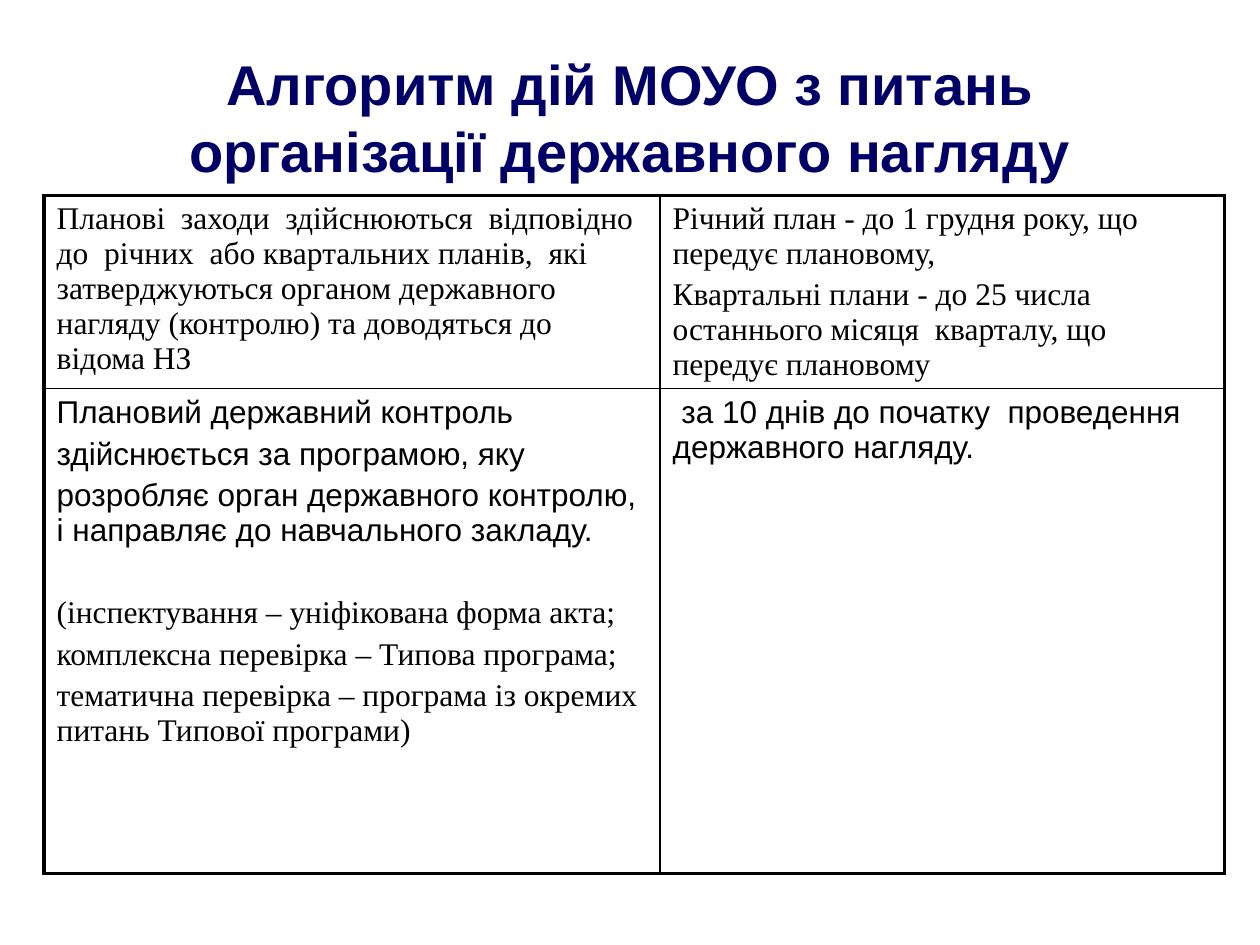
from dataclasses import dataclass

import pptx
import pptx.dml.color
import pptx.enum.text
import pptx.oxml
import pptx.oxml.ns
import pptx.util
from pptx.util import Pt


@dataclass(frozen=True)
class Theme:
    sans: str = "Arial"
    serif: str = "Times New Roman"
    title_color: str = "000066"
    ink: str = "000000"
    title_size: float = 32
    body_size: float = 18
    outer_line: float = 2.25
    inner_line: float = 1
    gap: float = 3.6
    section_gap: float = 27


@dataclass(frozen=True)
class Para:
    text: str
    font: str
    before: float


THEME = Theme()
COLUMNS = (352, 322.5)
ROWS = (110, 277)


def sans(text: str, before: float = THEME.gap) -> Para:
    return Para(text, THEME.sans, before)


def serif(text: str, before: float = THEME.gap) -> Para:
    return Para(text, THEME.serif, before)


CELLS = (
    (
        (serif("Планові  заходи  здійснюються  відповідно  до  річних  або квартальних планів,  "
               "які затверджуються органом державного нагляду (контролю) та доводяться до відома НЗ", 0),),
        (serif("Річний план - до 1 грудня року, що передує плановому,", 0),
         serif("Квартальні плани - до 25 числа останнього місяця  кварталу, що передує плановому")),
    ),
    (
        (sans("Плановий державний контроль", 0),
         sans("здійснюється за програмою, яку"),
         sans("розробляє орган державного контролю, і направляє до навчального закладу."),
         serif("(інспектування – уніфікована форма акта;", THEME.section_gap),
         serif("комплексна перевірка – Типова програма;"),
         serif("тематична перевірка – програма із окремих питань Типової програми)")),
        (sans(" за 10 днів до початку  проведення державного нагляду.", 0),),
    ),
)


def format_font(font, name: str, size: float, color: str, bold: bool = False) -> None:
    font.name = name
    font.size = Pt(size)
    font.bold = bold
    font.color.rgb = pptx.dml.color.RGBColor.from_string(color)


def add_border(cell, side: str, width: float) -> None:
    cell._tc.get_or_add_tcPr().append(pptx.oxml.parse_xml(
        f'<a:ln{side} {pptx.oxml.ns.nsdecls("a")} w="{Pt(width)}">'
        f'<a:solidFill><a:srgbClr val="{THEME.ink}"/></a:solidFill>'
        f'<a:prstDash val="solid"/></a:ln{side}>'))


def fill_cell(cell, paras: tuple[Para, ...]) -> None:
    tf = cell.text_frame
    tf.text = "\n".join(para.text for para in paras)
    for p, para in zip(tf.paragraphs, paras):
        p.space_before = Pt(para.before)
        for r in p.runs:
            format_font(r.font, para.font, THEME.body_size, THEME.ink)


def add_title(s, text: str) -> None:
    sp = s.shapes.title
    sp.left, sp.top, sp.width, sp.height = Pt(36), Pt(21.6), Pt(648), Pt(90)
    tf = sp.text_frame
    tf.text = text
    tf.vertical_anchor = pptx.enum.text.MSO_ANCHOR.MIDDLE
    p = tf.paragraphs[0]
    p.alignment = pptx.enum.text.PP_ALIGN.CENTER
    format_font(p.runs[0].font, THEME.sans, THEME.title_size, THEME.title_color, True)


def add_schedule(s) -> None:
    table = s.shapes.add_table(len(ROWS), len(COLUMNS), Pt(25.2), Pt(111.6),
                               Pt(sum(COLUMNS)), Pt(sum(ROWS))).table
    table.first_row = table.horz_banding = False
    for column, width in zip(table.columns, COLUMNS):
        column.width = Pt(width)
    for row, height in zip(table.rows, ROWS):
        row.height = Pt(height)
    for i, row in enumerate(CELLS):
        for j, paras in enumerate(row):
            cell = table.cell(i, j)
            fill_cell(cell, paras)
            outer = {"L": j == 0, "R": j == len(COLUMNS) - 1,
                     "T": i == 0, "B": i == len(ROWS) - 1}
            for side, is_outer in outer.items():
                add_border(cell, side, THEME.outer_line if is_outer else THEME.inner_line)
            cell.fill.background()


def main() -> None:
    prs = pptx.Presentation()
    prs.slide_width, prs.slide_height = Pt(720), Pt(540)
    s = prs.slides.add_slide(prs.slide_layouts.get_by_name("Title Only"))
    add_title(s, "Алгоритм дій МОУО з питань організації державного нагляду")
    add_schedule(s)
    prs.save("out.pptx")


if __name__ == "__main__":
    main()
